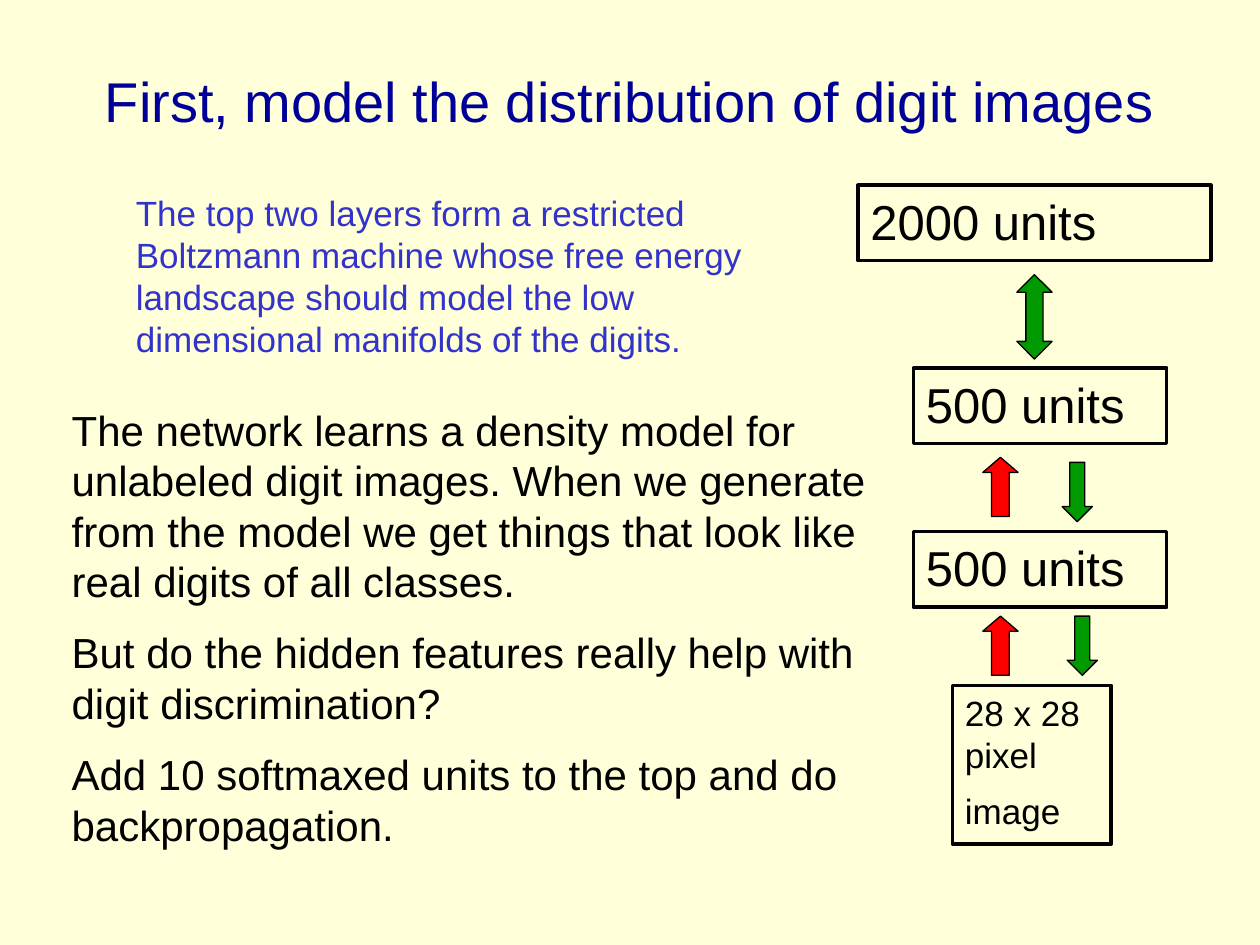
from dataclasses import dataclass

from pptx import Presentation
from pptx.dml.color import RGBColor
from pptx.enum.shapes import MSO_SHAPE
from pptx.enum.text import MSO_ANCHOR, PP_ALIGN
from pptx.util import Inches, Pt


@dataclass(frozen=True)
class Theme:
    """Colours, font and type sizes of the slide."""
    background: RGBColor = RGBColor(0xFF, 0xFF, 0xD9)
    heading: RGBColor = RGBColor(0x00, 0x00, 0x99)
    note: RGBColor = RGBColor(0x33, 0x33, 0xCC)
    ink: RGBColor = RGBColor(0x00, 0x00, 0x00)
    generate: RGBColor = RGBColor(0x00, 0x99, 0x00)
    recognise: RGBColor = RGBColor(0xFF, 0x00, 0x00)
    font: str = "Arial"
    heading_size: int = 32
    layer_size: int = 28
    body_size: int = 24
    small_size: int = 20
    layer_line: float = 2
    arrow_line: float = 0.75


THEME = Theme()
TITLE = "First, model the distribution of digit images"
NOTE = ["The top two layers form a restricted Boltzmann machine whose free energy "
        "landscape should model the low dimensional manifolds of the digits."]
BODY = [
    "The network learns a density model for unlabeled digit images. When we generate "
    "from the model we get things that look like real digits of all classes.",
    "But do the hidden features really help with digit discrimination?",
    "Add 10 softmaxed units to the top and do backpropagation.",
]
LAYERS = [
    (0, 0, 2.8, 0.6, ["2000 units"], THEME.layer_size),
    (0.44, 1.45, 2.01, 0.6, ["500 units"], THEME.layer_size),
    (0.44, 2.75, 2.01, 0.6, ["500 units"], THEME.layer_size),
    (0.75, 3.97, 1.26, 1.26, ["28 x 28 pixel", "image"], THEME.small_size),
]
ARROWS = [
    (MSO_SHAPE.UP_DOWN_ARROW, 1.26, 0.71, 0.28, 0.67, 0.486, THEME.generate),
    (MSO_SHAPE.DOWN_ARROW, 1.62, 2.2, 0.24, 0.47, 0.5, THEME.generate),
    (MSO_SHAPE.DOWN_ARROW, 1.66, 3.42, 0.24, 0.47, 0.5, THEME.generate),
    (MSO_SHAPE.UP_ARROW, 0.99, 3.42, 0.28, 0.47, 0.428, THEME.recognise),
    (MSO_SHAPE.UP_ARROW, 0.99, 2.16, 0.28, 0.47, 0.428, THEME.recognise),
]


def apply_format(target, values):
    """Set each named attribute on the target."""
    for name, value in values.items():
        setattr(target, name, value)


def inches(box):
    """Turn a box of numbers into lengths."""
    return [Inches(value) for value in box]


def write(frame, paragraphs, size, color, align=PP_ALIGN.LEFT, anchor=MSO_ANCHOR.TOP, gap=0):
    """Fill a text frame with evenly spaced paragraphs."""
    apply_format(frame, {"word_wrap": True, "vertical_anchor": anchor})
    for index, wording in enumerate(paragraphs):
        paragraph = frame.add_paragraph() if index else frame.paragraphs[0]
        apply_format(paragraph, {"alignment": align, "space_before": Pt(gap if index else 0)})
        run = paragraph.add_run()
        run.text = wording
        apply_format(run.font, {"name": THEME.font, "size": Pt(size)})
        run.font.color.rgb = color


def add_outlined(slide, kind, box, line_width):
    """Add a flat shape with an ink outline."""
    outlined = slide.shapes.add_shape(kind, *inches(box))
    outlined.shadow.inherit = False
    outlined.line.color.rgb = THEME.ink
    outlined.line.width = Pt(line_width)
    return outlined


def place_title(slide, box):
    """Move and format the title placeholder."""
    title = slide.shapes.title
    apply_format(title, dict(zip(("left", "top", "width", "height"), inches(box))))
    write(title.text_frame, [TITLE], THEME.heading_size, THEME.heading,
          PP_ALIGN.CENTER, MSO_ANCHOR.MIDDLE)


def place_text(slide, box, paragraphs, size, color):
    """Place a block of running text."""
    block = slide.shapes.add_textbox(*inches(box))
    write(block.text_frame, paragraphs, size, color, gap=size / 2)


def place_network(slide, left, top):
    """Place the stack of layers and the arrows between them."""
    for x, y, width, height, label, size in LAYERS:
        layer = add_outlined(slide, MSO_SHAPE.RECTANGLE,
                             (left + x, top + y, width, height), THEME.layer_line)
        layer.fill.background()
        write(layer.text_frame, label, size, THEME.ink, gap=8)
    for kind, x, y, width, height, head, color in ARROWS:
        arrow = add_outlined(slide, kind, (left + x, top + y, width, height), THEME.arrow_line)
        arrow.fill.solid()
        arrow.fill.fore_color.rgb = color
        arrow.adjustments[0] = 0.5
        arrow.adjustments[1] = head


def main():
    """Build and save the slide."""
    deck = Presentation()
    apply_format(deck, {"slide_width": Inches(10), "slide_height": Inches(7.5)})
    slide = deck.slides.add_slide(deck.slide_layouts[5])
    slide.background.fill.solid()
    slide.background.fill.fore_color.rgb = THEME.background
    place_title(slide, (0.5, 0.17, 9, 1.25))
    place_network(slide, 6.81, 1.47)
    place_text(slide, (0.47, 3.16, 6.69, 3.69), BODY, THEME.body_size, THEME.ink)
    place_text(slide, (0.98, 1.47, 5.12, 1.43), NOTE, THEME.small_size, THEME.note)
    deck.save("out.pptx")


if __name__ == "__main__":
    main()
